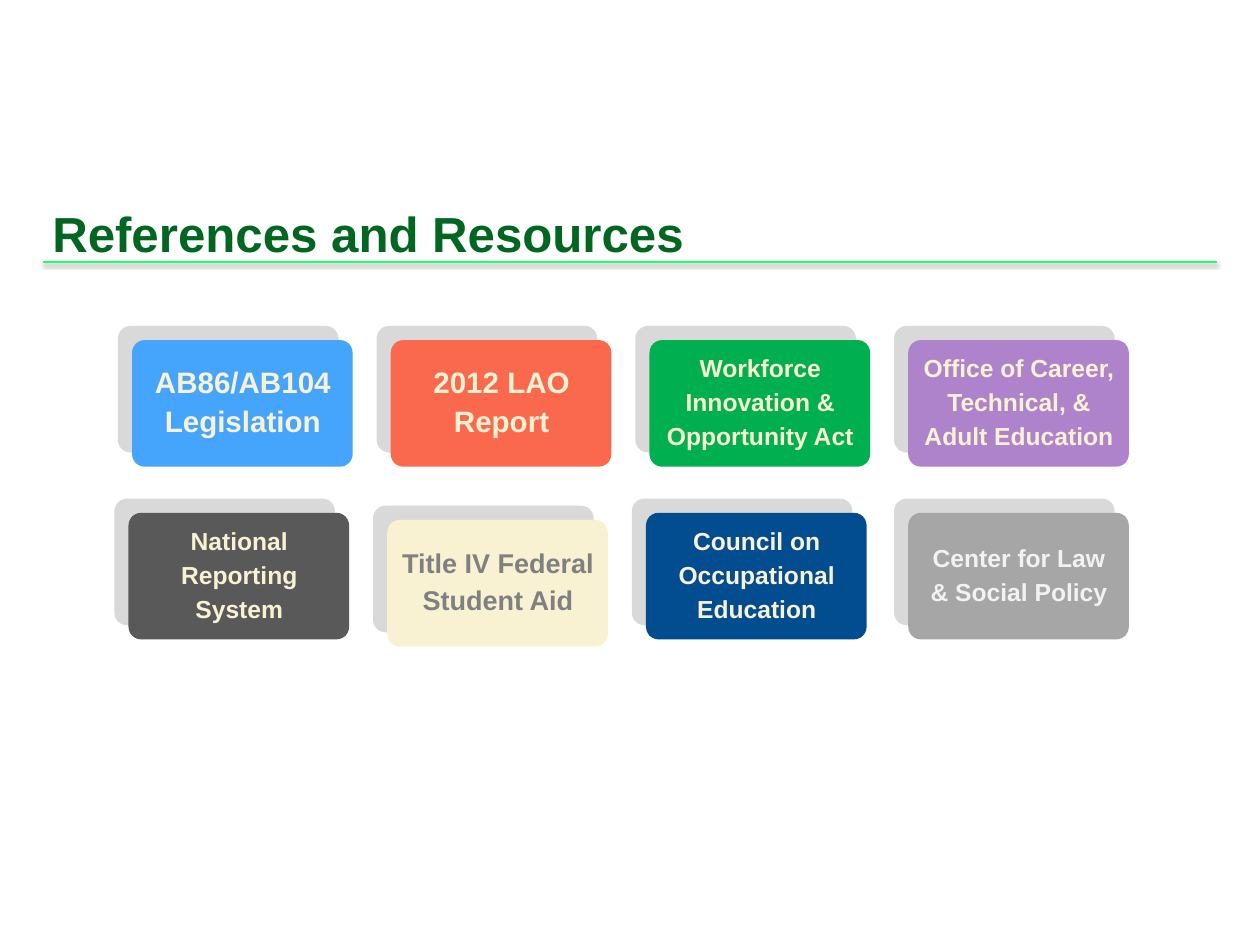
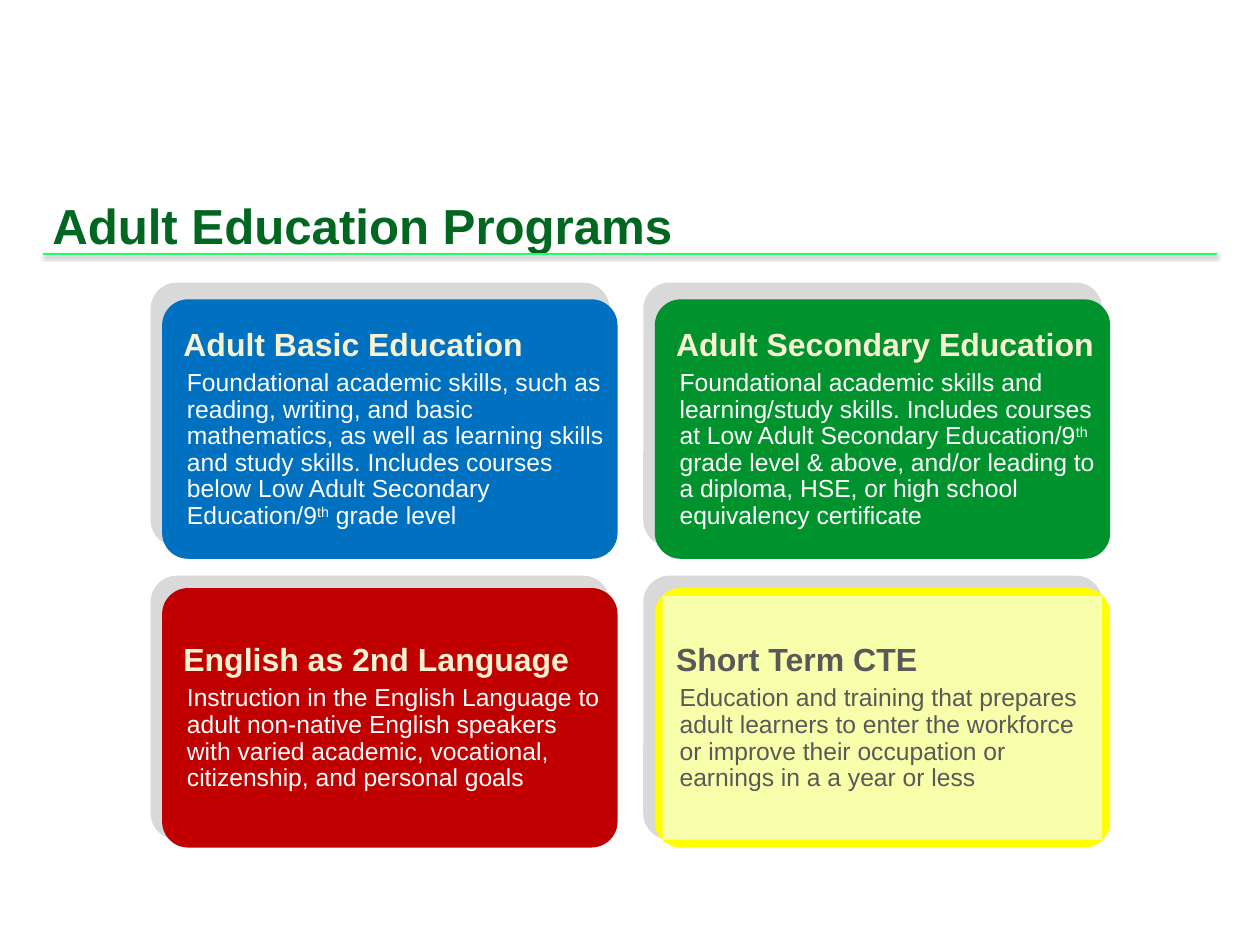
from lxml.etree import SubElement
from pptx import Presentation
from pptx.dml.color import RGBColor
from pptx.enum.shapes import MSO_CONNECTOR, MSO_SHAPE
from pptx.enum.text import MSO_ANCHOR, MSO_AUTO_SIZE, PP_ALIGN
from pptx.oxml.ns import qn
from pptx.util import Inches, Pt

HUES = {
    "title": "006620", "rule": "1FFF66", "back": "D9D9D9", "cream": "F8F2D3",
    "white": "FFFFFF", "pale": "F2F2F2", "mid": "808080", "dark": "595959",
    "sky": "45A4FC", "coral": "FA694E", "green": "00B050", "lilac": "AF82CC",
    "navy": "024C90", "grey": "A6A6A6", "blue": "0070C0", "leaf": "00922D",
    "red": "C00000", "yellow": "FFFF00", "lemon": "F7FFAB", "black": "000000",
}
FONT = "Arial"
PAD = Inches(0.07)
FRAME = {"word_wrap": True, "auto_size": MSO_AUTO_SIZE.NONE,
         "vertical_anchor": MSO_ANCHOR.MIDDLE, "margin_left": PAD,
         "margin_right": Inches(0.06), "margin_top": PAD, "margin_bottom": PAD}
HEAD = {**FRAME, "vertical_anchor": MSO_ANCHOR.TOP, "margin_left": Inches(0.1),
        "margin_top": Inches(0.05), "margin_bottom": 0}

# Lines, size, fill, ink, shift from the grid cell
LINKS = [
    (["AB86/AB104", "Legislation"], 24, "sky", "cream", (0, 0)),
    (["2012 LAO", "Report"], 24, "coral", "cream", (0, 0)),
    (["Workforce", "Innovation &", "Opportunity Act"], 20, "green", "cream", (0, 0)),
    (["Office of Career,", "Technical, &", "Adult Education"], 20, "lilac", "cream", (0, 0)),
    (["National", "Reporting", "System"], 20, "dark", "cream", (-0.04, 0)),
    (["Title IV Federal", "Student Aid"], 22, "cream", "mid", (-0.04, 0.08)),
    (["Council on", "Occupational", "Education"], 20, "navy", "cream", (-0.04, 0)),
    (["Center for Law", "& Social Policy"], 20, "grey", "pale", (0, 0)),
]

# Heading, body as runs (every second one raised), card, panel, heading ink, body ink
PLANS = [
    ("Adult Basic Education",
     ["Foundational academic skills, such as reading, writing, and basic mathematics, "
      "as well as learning skills and study skills. Includes courses below Low Adult "
      "Secondary Education/9", "th", " grade level"],
     "blue", "blue", "cream", "white"),
    ("Adult Secondary Education",
     ["Foundational academic skills and learning/study skills. Includes courses at Low "
      "Adult Secondary Education/9", "th", " grade level & above, and/or leading to a "
      "diploma, HSE, or high school equivalency certificate"],
     "leaf", "leaf", "cream", "white"),
    ("English as 2nd Language",
     ["Instruction in the English Language to adult non-native English speakers with "
      "varied academic, vocational, citizenship, and personal goals"],
     "red", "red", "cream", "white"),
    ("Short Term CTE",
     ["Education and training that prepares adult learners to enter the workforce or "
      "improve their occupation or earnings in a a year or less"],
     "yellow", "lemon", "dark", "dark"),
]


def hue(name):
    return RGBColor.from_string(HUES[name])


def put(item, vals):
    for key, val in vals.items():
        setattr(item, key, val)


def write(para, runs, size, ink, bold):
    """Add runs to a paragraph; every second run is raised."""
    for i, text in enumerate(runs):
        run = para.add_run()
        run.text = text
        put(run.font, {"name": FONT, "size": Pt(size), "bold": bold})
        run.font.color.rgb = hue(ink)
        if i % 2:
            run.font._element.set("baseline", "30000")


def block(shapes, kind, box, fill):
    shape = shapes.add_shape(kind, *map(Inches, box))
    shape.shadow.inherit = False
    shape.fill.solid()
    shape.fill.fore_color.rgb = hue(fill)
    shape.line.fill.background()
    if kind == MSO_SHAPE.ROUNDED_RECTANGLE:
        shape.adjustments[0] = 0.1
    return shape


def card(slide, back, front, edge, fill, panel):
    """Draw a grey backing, a rounded card and its inner panel; return the panel's frame."""
    block(slide.shapes, MSO_SHAPE.ROUNDED_RECTANGLE, back, "back")
    group = slide.shapes.add_group_shape().shapes
    block(group, MSO_SHAPE.ROUNDED_RECTANGLE, front, fill)
    x, y, w, h = front
    inner = (x + edge, y + edge, w - 2 * edge, h - 2 * edge)
    frame = block(group, MSO_SHAPE.RECTANGLE, inner, panel).text_frame
    put(frame, FRAME)
    return frame


def line(frame, i, align):
    """Return paragraph i of a frame, spaced from the one before."""
    para = frame.add_paragraph() if i else frame.paragraphs[0]
    put(para, {"alignment": align, "line_spacing": 0.9,
               "space_before": Pt(6 if i else 0)})
    return para


def rule(slide, y):
    bar = slide.shapes.add_connector(
        MSO_CONNECTOR.STRAIGHT, *map(Inches, (0.49, y, 13.73, y)))
    bar.line.color.rgb = hue("rule")
    bar.line.width = Pt(2)
    fx = SubElement(bar._element.spPr, qn("a:effectLst"))
    shade = SubElement(fx, qn("a:outerShdw"), blurRad=str(Pt(3)), dist=str(Pt(2)),
                       dir="5400000", rotWithShape="0")
    tint = SubElement(shade, qn("a:srgbClr"), val=HUES["black"])
    SubElement(tint, qn("a:alpha"), val="50000")


def page(deck, text, top):
    slide = deck.slides.add_slide(deck.slide_layouts[5])
    title = slide.shapes.title
    put(title, {"left": Inches(0.49), "top": Inches(top),
                "width": Inches(11.3), "height": Inches(0.92)})
    put(title.text_frame, HEAD)
    para = title.text_frame.paragraphs[0]
    para.alignment = PP_ALIGN.LEFT
    write(para, [text], 40, "title", True)
    rule(slide, top + 0.71)
    return slide


def links(deck):
    slide = page(deck, "References and Resources", 2.25)
    w, h = 2.49, 1.43
    for n, (rows, size, fill, ink, (dx, dy)) in enumerate(LINKS):
        row, col = divmod(n, 4)
        x, y = 1.33 + 2.92 * col + dx, 3.68 + 1.95 * row + dy
        frame = card(slide, (x, y, w, h), (x + 0.16, y + 0.16, w, h), 0.04, fill, fill)
        for i, text in enumerate(rows):
            write(line(frame, i, PP_ALIGN.CENTER), [text], size, ink, True)


def plans(deck):
    slide = page(deck, "Adult Education Programs", 2.16)
    for n, (head, body, fill, panel, ink, tone) in enumerate(PLANS):
        row, col = divmod(n, 2)
        x = 1.7 + 5.56 * col
        back = (x, 3.19 + 3.31 * row, 5.18, 2.98)
        front = (x + 0.13, 3.38 + 3.26 * row, 5.14, 2.93)
        frame = card(slide, back, front, 0.09, fill, panel)
        parts = [([head], 26, ink, True, 0.08), (body, 20, tone, False, 0.12)]
        for i, (runs, size, shade, bold, left) in enumerate(parts):
            para = line(frame, i, PP_ALIGN.LEFT)
            para._p.get_or_add_pPr().set("marL", str(Inches(left)))
            write(para, runs, size, shade, bold)


def main():
    deck = Presentation()
    put(deck, {"slide_width": Inches(14.22), "slide_height": Inches(10.67)})
    links(deck)
    plans(deck)
    deck.save("out.pptx")


if __name__ == "__main__":
    main()
